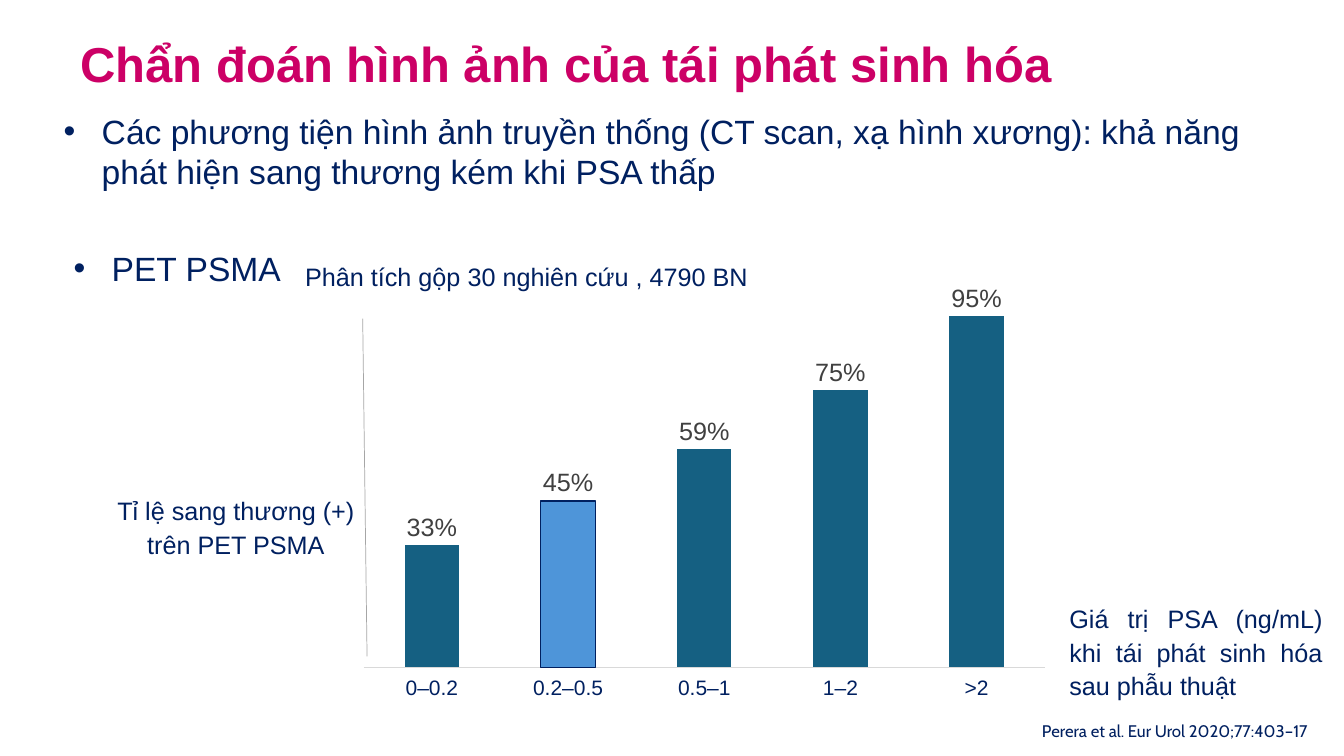
from lxml.etree import SubElement
from pptx import Presentation
from pptx.chart.data import CategoryChartData
from pptx.dml.color import RGBColor
from pptx.enum.chart import XL_CHART_TYPE as ChartType
from pptx.enum.chart import XL_LABEL_POSITION as LabelPosition
from pptx.enum.chart import XL_TICK_LABEL_POSITION as TickLabelPosition
from pptx.enum.chart import XL_TICK_MARK as TickMark
from pptx.enum.shapes import MSO_CONNECTOR as Connector
from pptx.enum.text import MSO_ANCHOR as Anchor
from pptx.enum.text import MSO_AUTO_SIZE as AutoSize
from pptx.enum.text import PP_ALIGN as Align
from pptx.oxml.ns import qn
from pptx.util import Cm, Pt

MAGENTA = RGBColor(0xCC, 0x00, 0x66)
NAVY = RGBColor(0x00, 0x20, 0x60)
TEAL = RGBColor(0x15, 0x60, 0x82)
SKY = RGBColor(0x4E, 0x95, 0xD9)
DARK_GREY = RGBColor(0x40, 0x40, 0x40)
MID_GREY = RGBColor(0xA6, 0xA6, 0xA6)
LIGHT_GREY = RGBColor(0xD9, 0xD9, 0xD9)

DETECTION_RATES = {"0–0.2": 33, "0.2–0.5": 45, "0.5–1": 59, "1–2": 75, ">2": 95}
HIGHLIGHTED_RANGE = 1


def set_all(target, values):
    for name, value in values.items():
        setattr(target, name, value)


def set_font(font, size, color, name="Arial", bold=False):
    set_all(font, {"size": Pt(size), "name": name, "bold": bold})
    font.color.rgb = color


def write(shape, text, box, size, color=NAVY, name="Arial", bold=False,
          frame_format=None, paragraph_format=None):
    """Place a shape at box (left, top, width, height in cm) and fill in its text."""
    left, top, width, height = map(Cm, box)
    set_all(shape, {"left": left, "top": top, "width": width, "height": height})
    frame = shape.text_frame
    set_all(frame, {"word_wrap": True, "auto_size": AutoSize.SHAPE_TO_FIT_TEXT,
                    "vertical_anchor": Anchor.TOP, **(frame_format or {})})
    paragraph = frame.paragraphs[0]
    set_all(paragraph, paragraph_format or {})
    run = paragraph.add_run()
    run.text = text
    set_font(run.font, size, color, name, bold)
    return paragraph


def write_bullet(placeholder, text, box):
    paragraph = write(placeholder, text, box, 24,
                      paragraph_format={"space_before": Pt(0)})
    properties = paragraph._p.get_or_add_pPr()
    properties.set("marL", str(Cm(1.42)))
    properties.set("indent", str(Cm(-0.96)))


def add_caption(slide, text, box, size=18, name="Arial", **paragraph_format):
    caption = slide.shapes.add_textbox(*map(Cm, box))
    write(caption, text, box, size, name=name, paragraph_format=paragraph_format)


def add_rule(slide, start, end):
    rule = slide.shapes.add_connector(Connector.STRAIGHT, *map(Cm, start + end))
    rule.line.color.rgb = MID_GREY
    rule.line.width = Pt(0.5)
    SubElement(rule._element.spPr, qn("a:effectLst"))


def set_plot_area(chart, **fractions):
    """Fix the inner plot area as fractions of the chart frame."""
    plot_area = chart._chartSpace.chart.plotArea
    layout = plot_area.find(qn("c:layout"))
    if layout is None:
        layout = SubElement(plot_area, qn("c:layout"))
        plot_area.insert(0, layout)
    manual = SubElement(layout, qn("c:manualLayout"))
    settings = {"layoutTarget": "inner", "xMode": "edge", "yMode": "edge", **fractions}
    for tag, value in settings.items():
        SubElement(manual, qn(f"c:{tag}")).set("val", str(value))


def add_detection_chart(slide, box):
    data = CategoryChartData()
    data.categories = list(DETECTION_RATES)
    data.add_series("Series 1", list(DETECTION_RATES.values()))
    chart = slide.shapes.add_chart(
        ChartType.COLUMN_CLUSTERED, *map(Cm, box), data).chart
    set_all(chart, {"has_legend": False, "has_title": False})
    set_font(chart.font, 15, NAVY)
    set_plot_area(chart, x=0.02, y=0.03, w=0.96, h=0.89)

    set_all(chart.value_axis, {"minimum_scale": 0, "maximum_scale": 100,
                               "has_major_gridlines": False, "visible": False})
    psa_axis = chart.category_axis
    set_all(psa_axis, {"major_tick_mark": TickMark.NONE,
                       "minor_tick_mark": TickMark.NONE,
                       "tick_label_position": TickLabelPosition.LOW,
                       "has_major_gridlines": False})
    set_font(psa_axis.tick_labels.font, 15, NAVY)
    psa_axis.format.line.color.rgb = LIGHT_GREY
    psa_axis.format.line.width = Pt(0.75)

    plot = chart.plots[0]
    set_all(plot, {"gap_width": 150, "overlap": -25,
                   "vary_by_categories": False, "has_data_labels": True})
    set_all(plot.data_labels, {"show_value": True, "number_format": '0"%"',
                               "number_format_is_linked": False,
                               "position": LabelPosition.OUTSIDE_END})
    set_font(plot.data_labels.font, 18, DARK_GREY)

    rates = plot.series[0]
    rates.format.fill.solid()
    rates.format.fill.fore_color.rgb = TEAL
    highlight = rates.points[HIGHLIGHTED_RANGE].format
    highlight.fill.solid()
    highlight.fill.fore_color.rgb = SKY
    highlight.line.color.rgb = NAVY
    highlight.line.width = Pt(0.75)


def main():
    deck = Presentation()
    set_all(deck, {"slide_width": Cm(33.87), "slide_height": Cm(19.05)})
    slide = deck.slides.add_slide(deck.slide_layouts.get_by_name("Two Content"))
    title, imaging, pet = slide.placeholders

    write(title, "Chẩn đoán hình ảnh của tái phát sinh hóa",
          (-0.64, 0.74, 29.85, 1.68), 35, MAGENTA, bold=True,
          frame_format={"margin_left": Cm(0.18), "margin_right": Cm(0.18),
                        "margin_top": Cm(0.1), "margin_bottom": Cm(0.1)},
          paragraph_format={"alignment": Align.CENTER})
    write_bullet(imaging, "Các phương tiện hình ảnh truyền thống (CT scan, xạ hình "
                 "xương): khả năng phát hiện sang thương kém khi PSA thấp",
                 (0.89, 2.67, 30.68, 2.31))
    write_bullet(pet, "PET PSMA", (1.14, 6.12, 30.68, 1.27))

    add_detection_chart(slide, (8.81, 7.16, 17.88, 10.49))
    add_caption(slide, "Giá trị PSA (ng/mL) khi tái phát sinh hóa sau phẫu thuật",
                (26.7, 15.01, 6.88, 2.72), alignment=Align.JUSTIFY, line_spacing=1.1)
    add_caption(slide, "Phân tích gộp 30 nghiên cứu , 4790 BN",
                (7.44, 6.38, 12.78, 1.04), alignment=Align.JUSTIFY, line_spacing=1.1)
    add_caption(slide, "Perera et al. Eur Urol 2020;77:403–17",
                (26.01, 18.03, 7.42, 0.76), size=12, name="Cabin")
    add_rule(slide, (9.14, 8.03), (9.25, 16.54))
    add_caption(slide, "Tỉ lệ sang thương (+) trên PET PSMA",
                (2.49, 12.29, 6.91, 1.88), alignment=Align.CENTER, line_spacing=1.1)
    deck.save("out.pptx")


if __name__ == "__main__":
    main()
